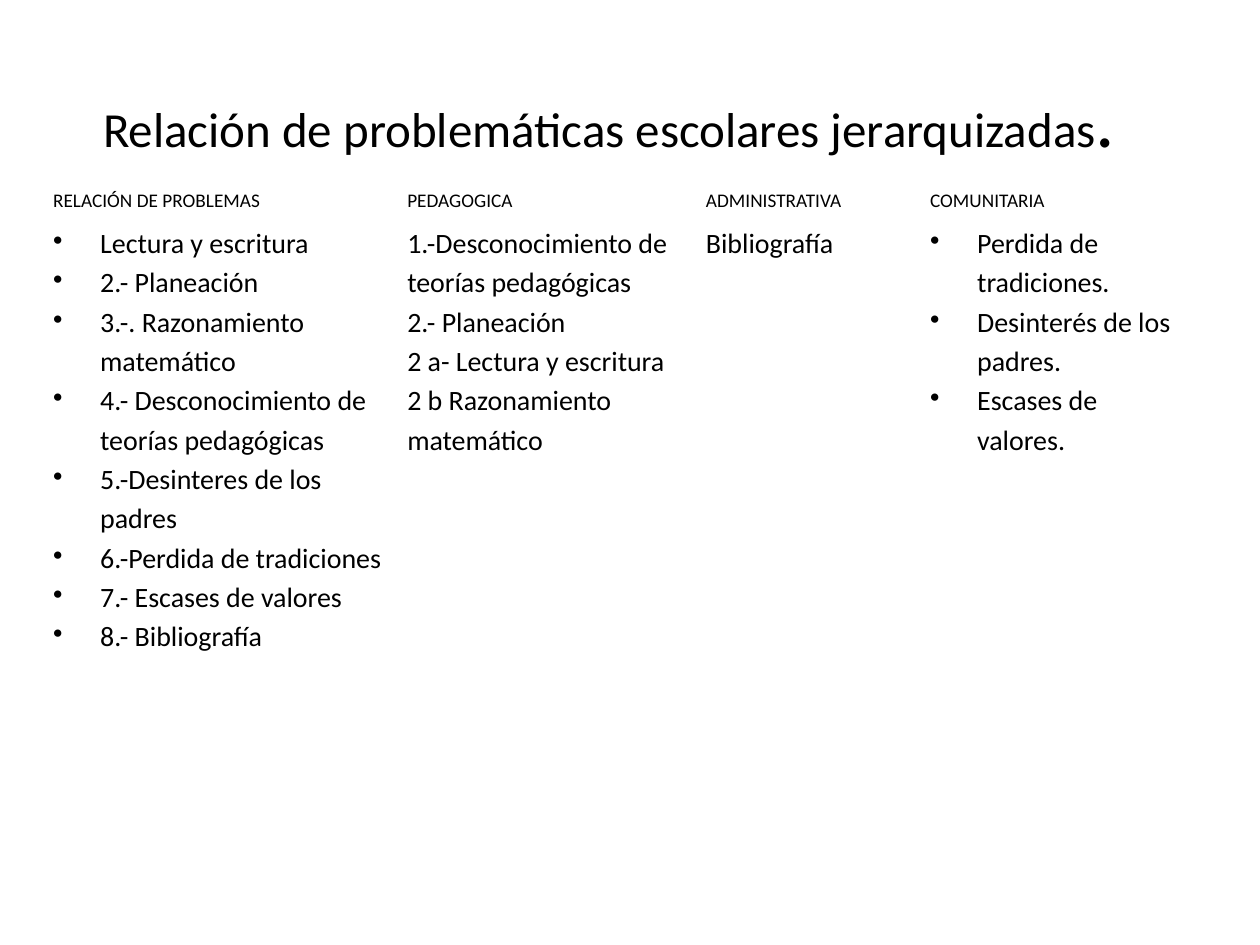
import dataclasses

import lxml.etree
import pptx
import pptx.dml.color
import pptx.enum.text
import pptx.oxml.ns
import pptx.util

Cm = pptx.util.Cm
Pt = pptx.util.Pt


@dataclasses.dataclass(frozen=True)
class Theme:
    """Colours, font and type sizes of the slide."""
    ink: str = "000000"
    font: str = "Calibri"
    title: int = 28
    dot: int = 44
    head: int = 11
    body: int = 16
    lead: float = 1.15


THEME = Theme()

TITLE = "Relación de problemáticas escolares jerarquizadas"
COLUMNS = [
    ("RELACIÓN DE PROBLEMAS", 7.14, True, [
        "Lectura y escritura",
        "2.- Planeación",
        "3.-. Razonamiento matemático",
        "4.- Desconocimiento de teorías pedagógicas",
        "5.-Desinteres de los padres",
        "6.-Perdida de tradiciones",
        "7.- Escases de valores",
        "8.- Bibliografía",
    ]),
    ("PEDAGOGICA", 6.02, False, [
        "1.-Desconocimiento de teorías pedagógicas",
        "2.- Planeación",
        "2 a- Lectura y escritura",
        "2 b Razonamiento matemático",
    ]),
    ("ADMINISTRATIVA", 4.52, False, ["Bibliografía"]),
    ("COMUNITARIA", 5.33, True, [
        "Perdida de tradiciones.",
        "Desinterés de los padres.",
        "Escases de valores.",
    ]),
]


def style(font, size):
    """Give a font the theme's face and ink at one size."""
    font.name = THEME.font
    font.size = Pt(size)
    font.color.rgb = pptx.dml.color.RGBColor.from_string(THEME.ink)


def bullet(para):
    """Hang a paragraph behind a round bullet."""
    props = para._p.get_or_add_pPr()
    props.set("marL", str(Cm(0.95)))
    props.set("indent", str(-Cm(0.95)))
    mark = lxml.etree.SubElement(props, pptx.oxml.ns.qn("a:buChar"))
    mark.set("char", "•")


def fill(cell, lines, size, dots=False):
    """Write lines into a clear table cell."""
    cell.fill.background()
    cell.margin_left = cell.margin_right = Cm(0.18)
    cell.margin_top = cell.margin_bottom = 0
    frame = cell.text_frame
    frame.text = "\n".join(lines)
    for para in frame.paragraphs:
        para.line_spacing = THEME.lead
        style(para.font, size)
        if dots:
            bullet(para)


def title(slide, left, top, width, height):
    """Place the centred heading with its large full stop."""
    frame = slide.shapes.add_textbox(left, top, width, height).text_frame
    frame.word_wrap = True
    frame.vertical_anchor = pptx.enum.text.MSO_ANCHOR.MIDDLE
    para = frame.paragraphs[0]
    para.alignment = pptx.enum.text.PP_ALIGN.CENTER
    for text, size in ((TITLE, THEME.title), (".", THEME.dot)):
        run = para.add_run()
        run.text = text
        style(run.font, size)


def grid(slide, left, top, width, height):
    """Place the table of problems, one column for each field."""
    table = slide.shapes.add_table(
        2, len(COLUMNS), left, top, width, height).table
    table.first_row = table.horz_banding = False
    table.rows[0].height = Cm(0.74)
    table.rows[1].height = height - Cm(0.74)
    for index, (head, span, dots, lines) in enumerate(COLUMNS):
        table.columns[index].width = Cm(span)
        fill(table.cell(0, index), [head], THEME.head)
        fill(table.cell(1, index), lines, THEME.body, dots)


def main():
    """Build and save the slide."""
    deck = pptx.Presentation()
    deck.slide_width, deck.slide_height = Cm(25.4), Cm(19.05)
    slide = deck.slides.add_slide(deck.slide_layouts[6])
    title(slide, Cm(1.27), Cm(0.76), Cm(22.02), Cm(3.18))
    grid(slide, Cm(0.89), Cm(3.73), Cm(23.01), Cm(14.4))
    deck.save("out.pptx")


if __name__ == "__main__":
    main()
